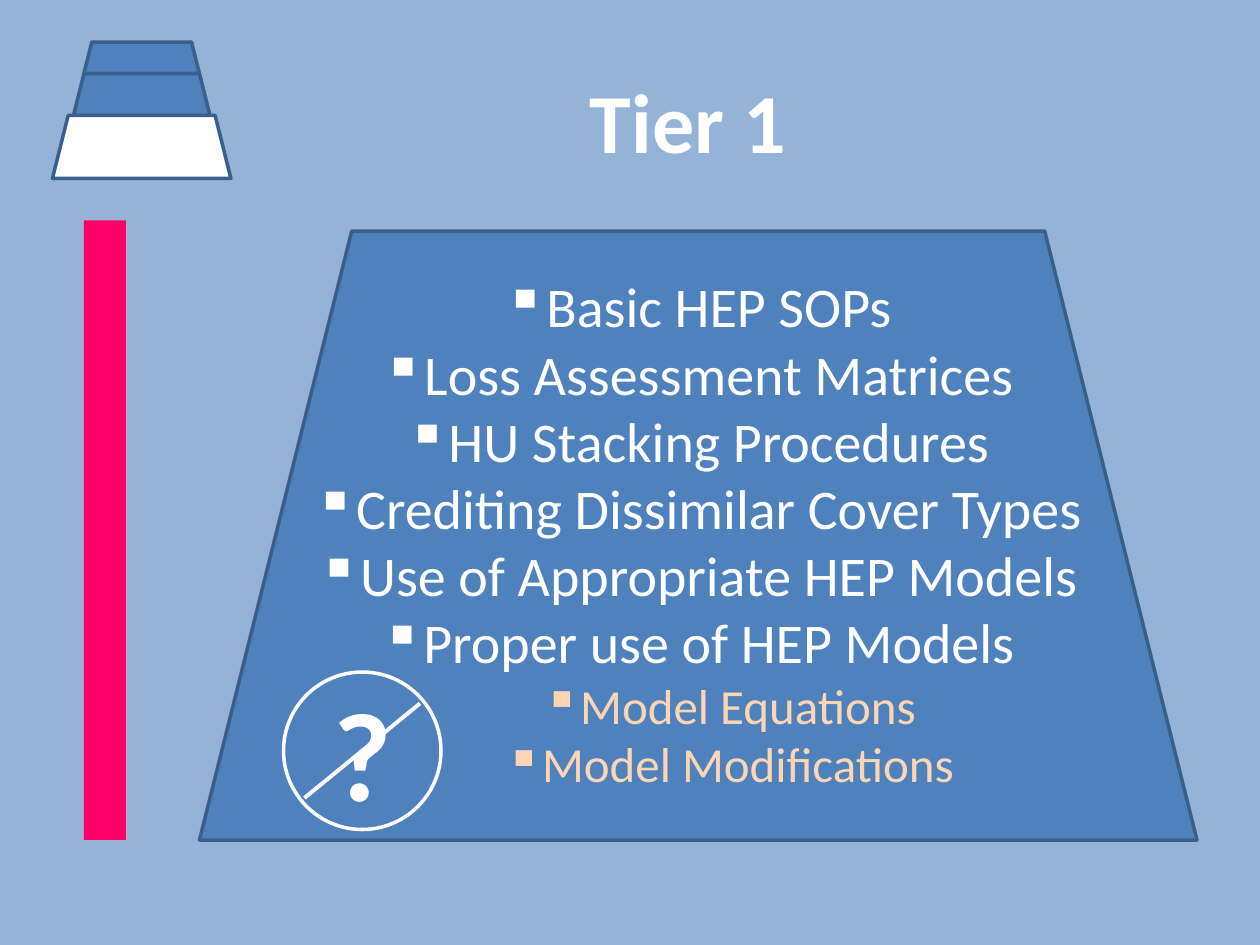
import pptx
import pptx.dml.color
import pptx.enum.shapes
import pptx.enum.text
import pptx.oxml.ns
import pptx.util
from lxml import etree

Pt = pptx.util.Pt
RGBColor = pptx.dml.color.RGBColor
Shape = pptx.enum.shapes.MSO_SHAPE
Align = pptx.enum.text.PP_ALIGN
Anchor = pptx.enum.text.MSO_ANCHOR
qn = pptx.oxml.ns.qn

SKY = RGBColor(0x95, 0xB3, 0xD7)
BLUE = RGBColor(0x4F, 0x81, 0xBD)
NAVY = RGBColor(0x3A, 0x5F, 0x8C)
PINK = RGBColor(0xFF, 0x00, 0x66)
PEACH = RGBColor(0xFC, 0xD5, 0xB5)
WHITE = RGBColor(0xFF, 0xFF, 0xFF)

TOPICS = [
    "Basic HEP SOPs",
    "Loss Assessment Matrices",
    "HU Stacking Procedures",
    "Crediting Dissimilar Cover Types",
    "Use of Appropriate HEP Models",
    "Proper use of HEP Models",
]
SUBTOPICS = ["Model Equations", "Model Modifications"]

# Left, top, width, height and fill of each tier in the small pyramid
TIERS = [
    (48, 24, 66, 18, BLUE),
    (42, 42, 78, 24, BLUE),
    (30, 66, 102, 36, WHITE),
]


def add_figure(page, kind, left, top, width, height, fill=None, line=None):
    figure = page.shapes.add_shape(kind, Pt(left), Pt(top), Pt(width), Pt(height))
    figure.shadow.inherit = False
    if fill is None:
        figure.fill.background()
    else:
        figure.fill.solid()
        figure.fill.fore_color.rgb = fill
    if line is None:
        figure.line.fill.background()
    else:
        figure.line.color.rgb = line
        figure.line.width = Pt(2)
    return figure


def add_line(page, start, end, color, width):
    line = page.shapes.add_connector(
        pptx.enum.shapes.MSO_CONNECTOR.STRAIGHT, *map(Pt, start + end))
    line.line.color.rgb = color
    line.line.width = Pt(width)
    etree.SubElement(line._element.spPr, qn("a:effectLst"))


def write(para, text, size, color=WHITE, bold=False, align=Align.CENTER,
          bullet=None, level=0):
    para.alignment = align
    para.level = level
    span = para.add_run()
    span.text = text
    span.font.name = "Calibri"
    span.font.size = Pt(size)
    span.font.bold = bold
    span.font.color.rgb = color
    if bullet:
        properties = para._p.get_or_add_pPr()
        properties.set("marL", str(Pt(36 * level)))
        properties.set("indent", "0")
        etree.SubElement(properties, qn("a:buChar")).set("char", bullet)


def add_topics(page):
    box = add_figure(page, Shape.TRAPEZOID, 114, 132, 570, 348, BLUE, NAVY)
    frame = box.text_frame
    frame.word_wrap = True
    frame.vertical_anchor = Anchor.MIDDLE
    frame.margin_bottom = Pt(42.6)  # lifts the list by half a line
    for index, text in enumerate(TOPICS + SUBTOPICS):
        para = frame.add_paragraph() if index else frame.paragraphs[0]
        if index < len(TOPICS):
            write(para, text, 32, bullet="▪")
        else:
            write(para, text, 28, color=PEACH, bullet="▪", level=1)


def add_title(page, text):
    box = page.shapes.add_textbox(Pt(330), Pt(36), Pt(127.5), Pt(65.5))
    box.text_frame.word_wrap = False
    write(box.text_frame.paragraphs[0], text, 48, bold=True, align=Align.LEFT)


def add_question_mark(page):
    circle = add_figure(page, Shape.OVAL, 162, 384, 90, 90, line=WHITE)
    circle.text_frame.vertical_anchor = Anchor.MIDDLE
    write(circle.text_frame.paragraphs[0], "?", 72, bold=True)
    add_line(page, (240, 402), (174, 456), WHITE, 2.25)


def main():
    deck = pptx.Presentation()
    deck.slide_width, deck.slide_height = Pt(720), Pt(540)
    page = deck.slides.add_slide(deck.slide_layouts[6])
    page.background.fill.solid()
    page.background.fill.fore_color.rgb = SKY

    # Main list, side bar and title
    add_topics(page)
    add_figure(page, Shape.RECTANGLE, 48, 126, 24, 354, PINK)
    add_title(page, "Tier 1")

    # Small pyramid with the current tier in white
    for left, top, width, height, fill in TIERS:
        add_figure(page, Shape.TRAPEZOID, left, top, width, height, fill, NAVY)

    # Struck-out question mark
    add_question_mark(page)

    deck.save("out.pptx")


if __name__ == "__main__":
    main()
